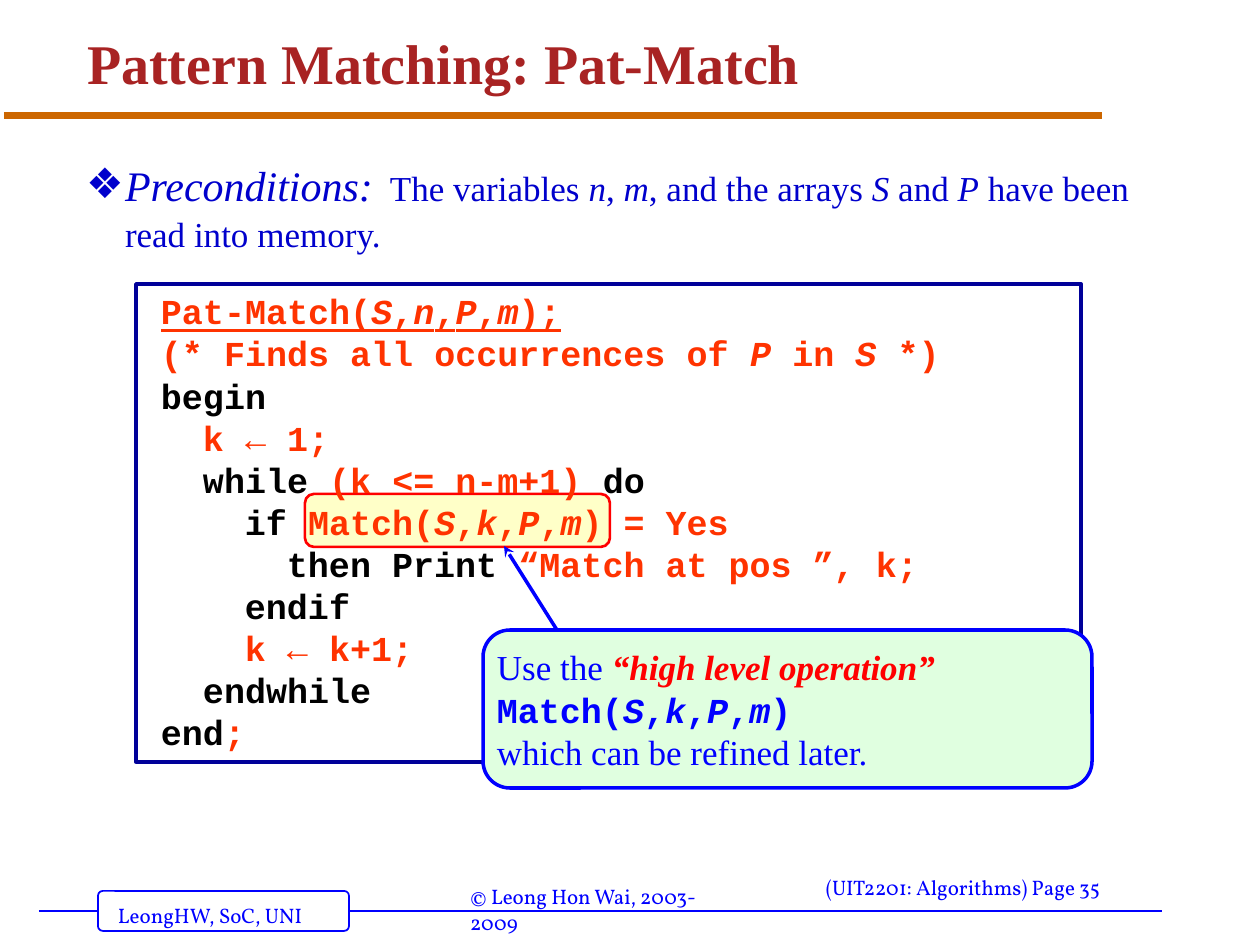
from lxml import etree
from pptx import Presentation
from pptx.dml.color import RGBColor
from pptx.enum.shapes import MSO_CONNECTOR, MSO_SHAPE
from pptx.enum.text import MSO_ANCHOR, MSO_AUTO_SIZE, PP_ALIGN
from pptx.oxml.ns import qn
from pptx.util import Emu, Pt

STRAIGHT = MSO_CONNECTOR.STRAIGHT
RECTANGLE = MSO_SHAPE.RECTANGLE
ROUNDED = MSO_SHAPE.ROUNDED_RECTANGLE
TOP, MIDDLE, BOTTOM = MSO_ANCHOR.TOP, MSO_ANCHOR.MIDDLE, MSO_ANCHOR.BOTTOM
LEFT = PP_ALIGN.LEFT
FIXED = MSO_AUTO_SIZE.NONE

BLUE = RGBColor(0x00, 0x00, 0xFF)
NAVY = RGBColor(0x00, 0x00, 0x99)
BODY_BLUE = RGBColor(0x00, 0x00, 0xCC)
BROWN = RGBColor(0xA8, 0x23, 0x23)
ORANGE = RGBColor(0xCC, 0x66, 0x00)
CODE_RED = RGBColor(0xFF, 0x33, 0x00)
RED = RGBColor(0xFF, 0x00, 0x00)
BLACK = RGBColor(0x00, 0x00, 0x00)
WHITE = RGBColor(0xFF, 0xFF, 0xFF)
CREAM = RGBColor(0xFF, 0xFF, 0xC8)
MINT = RGBColor(0xE0, 0xFF, 0xE0)

SERIF = {"name": "Times New Roman", "size": Pt(20), "bold": False}
MONO = {"name": "Courier New", "size": Pt(20), "bold": True}
TITLE = {**SERIF, "size": Pt(32), "bold": True, "color": BROWN}
BODY = {**SERIF, "color": BODY_BLUE}
LEAD = {**BODY, "size": Pt(24)}
CODE = {**MONO, "color": CODE_RED}
HEADER = {**CODE, "underline": True}
KEYWORD = {**MONO, "color": BLACK}
NOTE = {**SERIF, "color": BLUE}
NOTE_STRONG = {**SERIF, "bold": True, "color": RED}
NOTE_CODE = {**MONO, "color": BLUE}
FOOTER = {"name": "Vollkorn", "size": Pt(12), "color": BLUE}

CODE_INDENT = 42
PROGRAM = [
    (0, [("Pat-Match(_S_,_n_,_P_,_m_);", HEADER)]),
    (0, [("(* Finds all occurrences of _P_ in _S_ *)", CODE)]),
    (0, [("begin", KEYWORD)]),
    (1, [("k ← 1;", CODE)]),
    (1, [("while", KEYWORD), (" (k <= n-m+1) ", CODE), ("do", KEYWORD)]),
    (2, [("if", KEYWORD), (" Match(_S_,_k_,_P_,_m_) = Yes", CODE)]),
    (3, [("then Print", KEYWORD), (" “Match at pos ”, k;", CODE)]),
    (2, [("endif", KEYWORD)]),
    (2, [("k ← k+1;", CODE)]),
    (1, [("endwhile", KEYWORD)]),
    (0, [("end", KEYWORD), (";", CODE)]),
]
PRECONDITIONS = [
    ("_Preconditions:_", LEAD),
    ("  The variables _n_, _m_, and the arrays _S_ and _P_"
     " have been read into memory.", BODY),
]
CALLOUT = [
    (0, [("Use the ", NOTE), ("_“high level operation”_", NOTE_STRONG)]),
    (0, [("Match(_S_,_k_,_P_,_m_)", NOTE_CODE)]),
    (0, [("which can be refined later.", NOTE)]),
]
FOOTERS = [
    ((105, 897, 224, 38), "LeongHW, SoC, UNI"),
    ((813, 869, 316, 38), "(UIT2201: Algorithms) Page 35"),
    ((457, 878, 295, 38), "© Leong Hon Wai, 2003-2009"),
]


def px(length):
    return Emu(round(length * 914400 / 126))


class SlideBuilder:
    def __init__(self, page):
        self.page = page

    def fill_text(self, shape, lines, anchor=TOP, side=13, spacing=1.0):
        frame = shape.text_frame
        settings = {
            "word_wrap": True, "auto_size": FIXED, "vertical_anchor": anchor,
            "margin_left": px(side), "margin_right": px(side),
            "margin_top": px(6), "margin_bottom": px(6),
        }
        for name, value in settings.items():
            setattr(frame, name, value)
        for index, (level, spans) in enumerate(lines):
            para = frame.add_paragraph() if index else frame.paragraphs[0]
            para.alignment = LEFT
            para.line_spacing = spacing
            para.space_before = Pt(0)
            if level:
                self.indent(para, level * CODE_INDENT)
            for text, style in spans:
                self.add_spans(para, text, style)

    def add_spans(self, para, text, style):
        for index, piece in enumerate(text.split("_")):
            if not piece:
                continue
            span = para.add_run()
            span.text = piece
            span.font.italic = index % 2 == 1
            for name, value in style.items():
                if name == "color":
                    span.font.color.rgb = value
                else:
                    setattr(span.font, name, value)

    def indent(self, para, left, first=0):
        properties = para._p.get_or_add_pPr()
        properties.set("marL", str(px(left)))
        properties.set("indent", str(px(first)))
        return properties

    def place(self, shape, bounds):
        for name, value in zip(("left", "top", "width", "height"), bounds):
            setattr(shape, name, px(value))

    def title(self, bounds, text):
        shape = self.page.shapes.title
        self.place(shape, bounds)
        self.fill_text(shape, [(0, [(text, TITLE)])], BOTTOM, spacing=0.9)

    def bullet(self, bounds, spans):
        shape = self.page.placeholders[1]
        self.place(shape, bounds)
        self.fill_text(shape, [(0, spans)], spacing=Pt(26))
        properties = self.indent(shape.text_frame.paragraphs[0], 39, -39)
        etree.SubElement(properties, qn("a:buChar")).set("char", "❖")

    def label(self, bounds, text):
        box = self.page.shapes.add_textbox(*map(px, bounds))
        self.fill_text(box, [(0, [(text, FOOTER)])])

    def box(self, kind, bounds, fill, color, weight, rounding=None):
        shape = self.page.shapes.add_shape(kind, *map(px, bounds))
        shape.shadow.inherit = False
        if fill is None:
            shape.fill.background()
        else:
            shape.fill.solid()
            shape.fill.fore_color.rgb = fill
        shape.line.color.rgb = color
        shape.line.width = Pt(weight)
        if rounding is not None:
            shape.adjustments[0] = rounding
        return shape

    def line(self, ends, color, weight, arrow=None):
        connector = self.page.shapes.add_connector(STRAIGHT, *map(px, ends))
        connector.line.color.rgb = color
        connector.line.width = Pt(weight)
        properties = connector.element.spPr
        if arrow:
            outline = properties.find(qn("a:ln"))
            etree.SubElement(outline, qn("a:tailEnd")).set("type", arrow)
        etree.SubElement(properties, qn("a:effectLst"))


def main():
    deck = Presentation()
    deck.slide_width, deck.slide_height = px(1260), px(945)
    page = deck.slides.add_slide(deck.slide_layouts[1])
    builder = SlideBuilder(page)

    builder.line((39, 911, 1162, 911), BLUE, 1)
    builder.box(ROUNDED, (98, 891, 251, 40), WHITE, BLUE, 1, 0.12)
    builder.line((4, 116, 1102, 116), ORANGE, 4)
    for bounds, text in FOOTERS:
        builder.label(bounds, text)

    builder.title((74, 16, 1071, 87), "Pattern Matching: Pat-Match")
    builder.bullet((73, 158, 1072, 116), PRECONDITIONS)

    builder.box(ROUNDED, (305, 494, 305, 53), CREAM, RED, 1.5, 0.17)
    program = builder.box(RECTANGLE, (136, 284, 945, 478), None, NAVY, 2)
    builder.fill_text(program, PROGRAM, side=25)

    callout = builder.box(ROUNDED, (483, 630, 609, 158), MINT, BLUE, 2, 0.17)
    builder.fill_text(callout, CALLOUT, MIDDLE, side=6)
    builder.line((557, 630, 504, 546), BLUE, 2, "stealth")

    deck.save("out.pptx")


if __name__ == "__main__":
    main()
